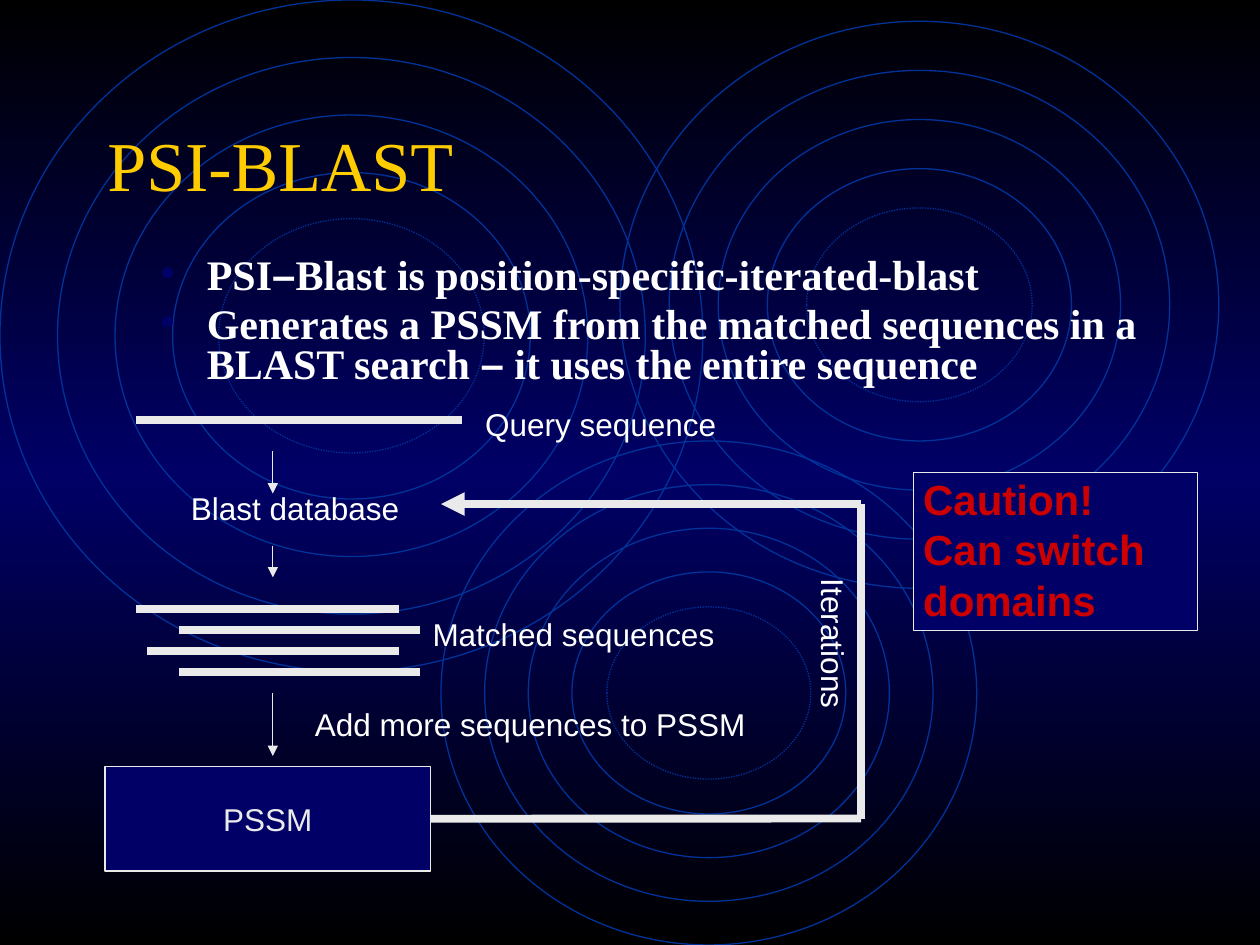
from copy import deepcopy
from dataclasses import dataclass

from pptx import Presentation
from pptx.dml.color import RGBColor
from pptx.enum.dml import MSO_LINE
from pptx.enum.shapes import MSO_CONNECTOR, MSO_SHAPE
from pptx.enum.text import MSO_ANCHOR, MSO_AUTO_SIZE, PP_ALIGN
from pptx.oxml import parse_xml
from pptx.oxml.ns import nsdecls, qn
from pptx.util import Cm, Pt


@dataclass(frozen=True)
class Theme:
    black: str = "000000"
    navy: str = "000066"
    ring: str = "003399"
    gold: str = "FFCC00"
    white: str = "FFFFFF"
    pale: str = "EAEAEA"
    red: str = "CC0000"
    sans: str = "Arial"
    serif: str = "Times New Roman"
    head: int = 40
    lead: int = 24
    label: int = 18
    thin: float = 0.75
    thick: float = 4.5


theme = Theme()


def add_run(para, text, font, size, color, bold=False):
    run = para.add_run()
    run.text = text
    run.font.name = font
    run.font.size = Pt(size)
    run.font.bold = bold
    run.font.color.rgb = RGBColor.from_string(color)


def add_line(start, end, width, arrow=False):
    points = [Cm(v) for v in (*start, *end)]
    line = slide.shapes.add_connector(MSO_CONNECTOR.STRAIGHT, *points)
    line.line.color.rgb = RGBColor.from_string(theme.pale)
    line.line.width = Pt(width)
    if arrow:
        line.line._get_or_add_ln().append(
            parse_xml(f'<a:tailEnd {nsdecls("a")} type="triangle"/>'))
    line._element.spPr.append(parse_xml(f'<a:effectLst {nsdecls("a")}/>'))
    return line


deck = Presentation()
deck.slide_width, deck.slide_height = Cm(25.4), Cm(19.05)
slide = deck.slides.add_slide(deck.slide_layouts[5])

# Background: black, navy in the middle, black
back = slide.background.fill
back.gradient()
back.gradient_angle = 270
stops = slide.element.find(".//" + qn("a:gsLst"))
stops.insert(1, deepcopy(stops[0]))
for stop, place, color in zip(back.gradient_stops, (0, 0.5, 1),
                              (theme.black, theme.navy, theme.black)):
    stop.position = place
    stop.color.rgb = RGBColor.from_string(color)

# Three sets of rings, the innermost dotted
for x, y, w, h, step in ((0, 0, 14.17, 13.54, 1.16),
                         (8.89, 8.89, 10.8, 10.16, 0.88),
                         (12.5, 0.43, 12.07, 11.43, 0.99)):
    for level in (0, 1, 2, 3, 3.8):
        gap = step * level
        ring = slide.shapes.add_shape(
            MSO_SHAPE.OVAL, Cm(x + gap), Cm(y + gap),
            Cm(w - 2 * gap), Cm(h - 2 * gap))
        ring.shadow.inherit = False
        ring.fill.background()
        ring.line.color.rgb = RGBColor.from_string(theme.ring)
        ring.line.width = Pt(theme.thin)
        if level == 3.8:
            ring.line.dash_style = MSO_LINE.ROUND_DOT

# Title, brought in front of the rings
title = slide.shapes.title
title.left, title.top, title.width, title.height = (
    Cm(1.91), Cm(1.7), Cm(21.59), Cm(3.18))
title.text_frame.vertical_anchor = MSO_ANCHOR.MIDDLE
para = title.text_frame.paragraphs[0]
para.alignment = PP_ALIGN.LEFT
add_run(para, "PSI-BLAST", theme.serif, theme.head, theme.gold)
title.element.getparent().append(title.element)

# Bullet points
body = slide.shapes.add_textbox(Cm(2.97), Cm(5.08), Cm(20.6), Cm(2.31))
frame = body.text_frame
frame.word_wrap = True
points = (
    ("PSI", "–", "Blast is position-specific-iterated-blast"),
    ("Generates a PSSM from the matched sequences in a BLAST search ",
     "–", " it uses the entire sequence"),
)
for i, parts in enumerate(points):
    para = frame.add_paragraph() if i else frame.paragraphs[0]
    para.line_spacing = 0.8
    para.space_before = Pt(4.8)
    props = para._p.get_or_add_pPr()
    props.set("marL", str(Cm(0.95)))
    props.set("indent", str(-Cm(0.95)))
    for mark in (f'<a:buClr {nsdecls("a")}><a:srgbClr val="{theme.navy}"/></a:buClr>',
                 f'<a:buSzPct {nsdecls("a")} val="110000"/>',
                 f'<a:buFont {nsdecls("a")} typeface="{theme.serif}"/>',
                 f'<a:buChar {nsdecls("a")} char="•"/>'):
        props.append(parse_xml(mark))
    for part in parts:
        font = theme.sans if part == "–" else theme.serif
        add_run(para, part, font, theme.lead, theme.white, True)

# Boxes
boxes = []
for x, y, w, h in ((18.42, 9.53, 5.72, 3.18), (2.12, 15.45, 6.56, 2.11)):
    box = slide.shapes.add_shape(MSO_SHAPE.RECTANGLE, Cm(x), Cm(y), Cm(w), Cm(h))
    box.shadow.inherit = False
    box.fill.solid()
    box.fill.fore_color.rgb = RGBColor.from_string(theme.navy)
    box.line.color.rgb = RGBColor.from_string(theme.pale)
    box.line.width = Pt(theme.thin)
    boxes.append(box)
pssm = boxes[1]
pssm.text_frame.word_wrap = False
pssm.text_frame.vertical_anchor = MSO_ANCHOR.MIDDLE
para = pssm.text_frame.paragraphs[0]
para.alignment = PP_ALIGN.CENTER
add_run(para, "PSSM", theme.sans, theme.label, theme.pale)

# Query and matched sequences
add_line((2.75, 8.47), (9.31, 8.47), theme.thick)
for i, (left, right) in enumerate(((2.75, 8.04), (3.6, 8.47),
                                   (2.96, 8.04), (3.6, 8.47))):
    y = 12.28 + 0.42 * i
    add_line((left, y), (right, y), theme.thick)

# Arrows down the steps
for top, end in ((9.1, 9.95), (11, 11.64), (13.97, 15.24)):
    add_line((5.5, top), (5.5, end), theme.thin, True)

# Loop back to the database
loop = add_line((8.68, 16.5), (17.36, 16.5), theme.thick)
loop.begin_connect(pssm, 3)
add_line((17.36, 16.5), (17.36, 10.16), theme.thick)
add_line((17.36, 10.16), (8.89, 10.16), theme.thick, True)

# Labels
for text, x, y, w, turn in (
        ("Query sequence", 9.53, 8.05, 5.16, 0),
        ("Matched sequences", 8.47, 12.28, 6.2, 0),
        ("Blast database", 3.6, 9.74, 4.7, 0),
        ("Add more sequences to PSSM", 6.1, 14.08, 9.19, 0),
        ("Iterations", 15.24, 12.47, 3.12, 90)):
    label = slide.shapes.add_textbox(Cm(x), Cm(y), Cm(w), Cm(1.02))
    label.rotation = turn
    label.text_frame.word_wrap = False
    label.text_frame.auto_size = MSO_AUTO_SIZE.SHAPE_TO_FIT_TEXT
    add_run(label.text_frame.paragraphs[0], text,
            theme.sans, theme.label, theme.white)

# Caution note
note = slide.shapes.add_textbox(Cm(18.36), Cm(9.42), Cm(5.33), Cm(3.3))
frame = note.text_frame
frame.word_wrap = True
frame.auto_size = MSO_AUTO_SIZE.SHAPE_TO_FIT_TEXT
for i, text in enumerate(("Caution!", "Can switch domains")):
    para = frame.add_paragraph() if i else frame.paragraphs[0]
    add_run(para, text, theme.sans, theme.lead, theme.red, True)

deck.save("out.pptx")
